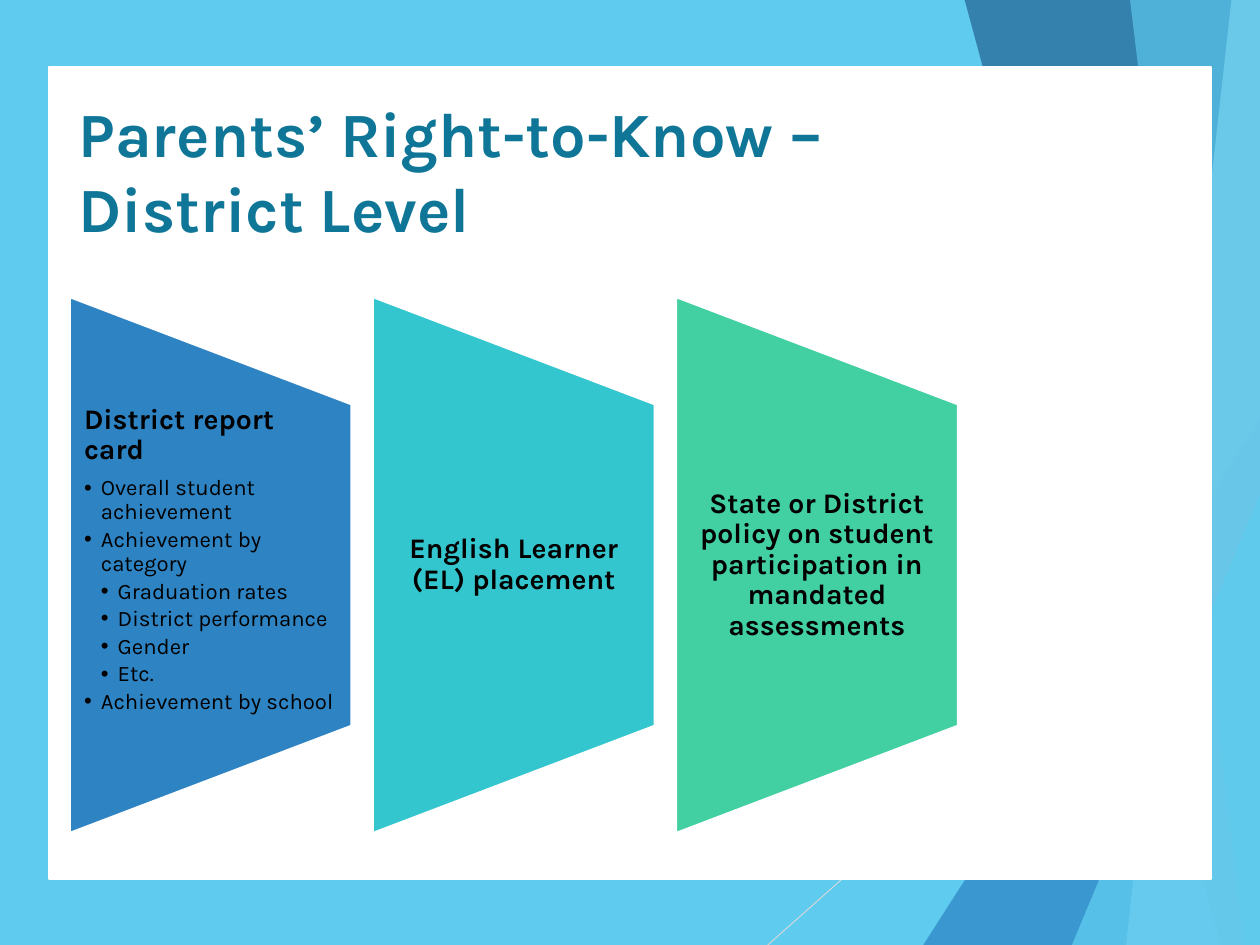
from lxml.etree import SubElement as Sub
from pptx import Presentation
from pptx.dml.color import RGBColor as RGB
from pptx.enum.shapes import MSO_CONNECTOR as LINK
from pptx.enum.shapes import MSO_SHAPE as KIND
from pptx.enum.text import MSO_ANCHOR as ANCHOR
from pptx.enum.text import PP_ALIGN as ALIGN
from pptx.oxml.ns import qn
from pptx.util import Inches, Pt

SKY = RGB(0x5F, 0xCB, 0xEF)
PALE = RGB(0x9F, 0xE0, 0xF5)
BLUE = RGB(0x2E, 0x83, 0xC3)
NAVY = RGB(0x22, 0x62, 0x92)
AQUA = RGB(0x34, 0xC6, 0xCE)
GREEN = RGB(0x42, 0xD0, 0xA2)
TEAL = RGB(0x0F, 0x76, 0x98)
GREY = RGB(0xD9, 0xD9, 0xD9)
WHITE = RGB(0xFF, 0xFF, 0xFF)
BLACK = RGB(0, 0, 0)

COLS, ROWS = 64, 48
UNIT = Inches(14.22) / COLS


def grid(*cells):
    return [round(cell * UNIT) for cell in cells]


def write(frame, text, size=18, color=BLACK, bold=False, align=ALIGN.LEFT,
          line=0.9, after=0, level=0):
    par = frame.paragraphs[0]
    if par.runs:
        par = frame.add_paragraph()
    par.alignment, par.line_spacing, par.space_after = align, line, Pt(after)
    run = par.add_run()
    run.text = text
    font = run.font
    font.name, font.size, font.bold = "Karla", Pt(size), bold
    font.color.rgb = color
    if level:
        par.level = level
        step = Inches(0.19)
        props = par._p.get_or_add_pPr()
        props.set("marL", str(step * level))
        props.set("indent", str(-step))
        Sub(props, qn("a:buFont"), typeface="Arial")
        Sub(props, qn("a:buChar"), char="•")


deck = Presentation()
deck.slide_width, deck.slide_height = grid(COLS, ROWS)
shapes = deck.slides.add_slide(deck.slide_layouts[6]).shapes

back = shapes.add_shape(KIND.RECTANGLE, *grid(0, 0, COLS, ROWS))
paints = [(back, SKY, 100, 0)]

ray = shapes.add_connector(LINK.STRAIGHT, *grid(COLS, 25.8, 39, ROWS))
ray.line.color.rgb = GREY
ray.line.width = Pt(0.75)
Sub(ray._element.spPr, qn("a:effectLst"))

facets = [
    ("band", (59, 48.2), SKY, 30),
    ("band", (50.4, 56.75), SKY, 20),
    ("wedge", (46.9, 21.3, 1), BLUE, 72),
    ("band", (49, 62), NAVY, 70),
    ("band", (62.55, 57.2), PALE, 70),
    ("band", (57.4, 63.2), SKY, 65),
    ("wedge", (54.45, 25.1, 1), SKY, 80),
    ("wedge", (0, 28.1, 0), SKY, 85),
]
for form, spots, color, alpha in facets:
    if form == "band":
        top, base = spots
        pen = shapes.build_freeform(*grid(top, 0))
        pen.add_line_segments(
            [grid(COLS, 0), grid(COLS, ROWS), grid(base, ROWS)])
        facet = pen.convert_to_shape()
    else:
        left, top, peak = spots
        wide = COLS - left if peak else 2.35
        facet = shapes.add_shape(
            KIND.ISOSCELES_TRIANGLE, *grid(left, top, wide, ROWS - top))
        facet.adjustments[0] = peak
    paints.append((facet, color, alpha, 0))

panel = shapes.add_shape(KIND.RECTANGLE, *grid(2.5, 3.4, 59, 41.25))
paints.append((panel, WHITE, 100, 1.75))

title = shapes.add_textbox(*grid(3.55, 4.3, 45.15, 9.2)).text_frame
title.word_wrap = True
title.margin_top = Inches(0.11)
write(title, "Parents’ Right-to-Know – District Level", size=51.2,
      color=TEAL, bold=True, line=1)

cards = [
    ("District report card", BLUE, [
        ("Overall student achievement", 1),
        ("Achievement by category", 1),
        ("Graduation rates", 2),
        ("District performance", 2),
        ("Gender", 2),
        ("Etc.", 2),
        ("Achievement by school", 1),
    ]),
    ("English Learner (EL) placement", AQUA, []),
    ("State or District policy on student participation "
     "in mandated assessments", GREEN, []),
]
WIDE, TALL, STEP, MID = 14.3, 27.2, 15.4, 28.7
for col, (head, color, items) in enumerate(cards):
    left = 3.55 + col * STEP
    card = shapes.add_shape(
        KIND.FLOWCHART_MANUAL_OPERATION,
        *grid(left + (WIDE - TALL) / 2, MID - WIDE / 2, TALL, WIDE))
    card.rotation = 270
    paints.append((card, color, 100, 1.5))

    frame = shapes.add_textbox(*grid(left, 20.55, WIDE, 16.3)).text_frame
    frame.word_wrap = True
    frame.margin_left = frame.margin_right = Inches(0.16)
    frame.margin_top = frame.margin_bottom = 0
    frame.vertical_anchor = ANCHOR.TOP if items else ANCHOR.MIDDLE
    write(frame, head, size=23, bold=True, after=9,
          align=ALIGN.LEFT if items else ALIGN.CENTER)
    for item, level in items:
        write(frame, item, after=3, level=level)

for shape, color, alpha, edge in paints:
    shape.shadow.inherit = False
    shape.fill.solid()
    shape.fill.fore_color.rgb = color
    if alpha < 100:
        tint = shape._element.spPr.find(qn("a:solidFill"))[0]
        Sub(tint, qn("a:alpha"), val=str(alpha * 1000))
    if edge:
        shape.line.color.rgb = WHITE
        shape.line.width = Pt(edge)
    else:
        shape.line.fill.background()

deck.save("out.pptx")
